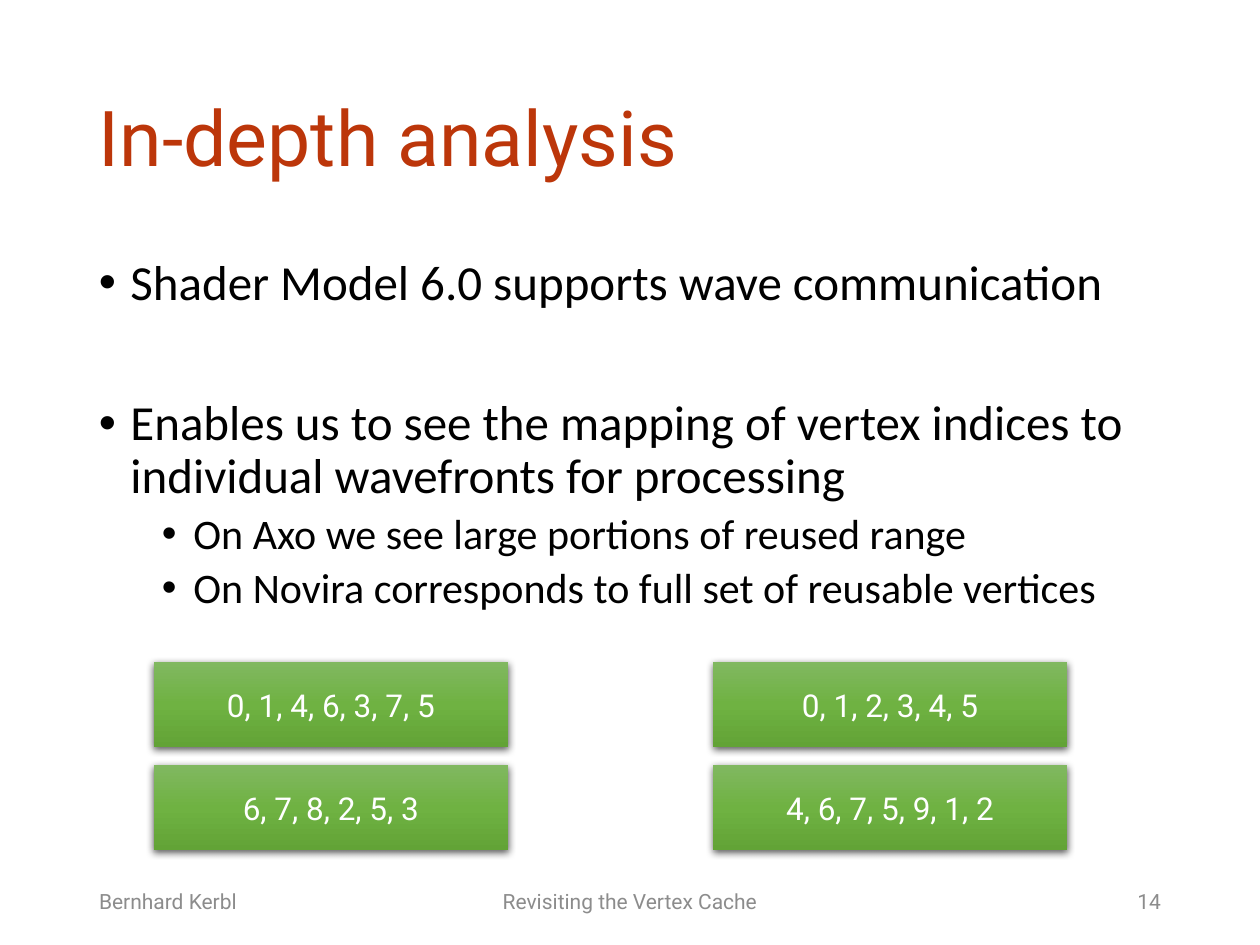
from copy import deepcopy

from lxml import etree
from pptx import Presentation
from pptx.dml.color import RGBColor
from pptx.enum.shapes import MSO_SHAPE
from pptx.enum.text import MSO_ANCHOR, PP_ALIGN
from pptx.oxml.ns import qn
from pptx.util import Pt

LEFT, CENTER, RIGHT = PP_ALIGN.LEFT, PP_ALIGN.CENTER, PP_ALIGN.RIGHT
TOP, MIDDLE = MSO_ANCHOR.TOP, MSO_ANCHOR.MIDDLE
RECTANGLE = MSO_SHAPE.RECTANGLE

TITLE = "In-depth analysis"
BULLETS = [
    (0, 0, "Shader Model 6.0 supports wave communication"),
    (0, 50, "Enables us to see the mapping of vertex indices to "
            "individual wavefronts for processing"),
    (1, 5, "On Axo we see large portions of reused range"),
    (1, 5, "On Novira corresponds to full set of reusable vertices"),
]
WAVEFRONTS = [
    ["0, 1, 4, 6, 3, 7, 5", "0, 1, 2, 3, 4, 5"],
    ["6, 7, 8, 2, 5, 3", "4, 6, 7, 5, 9, 1, 2"],
]
FOOTER = [
    (49.5, 162, LEFT, "Bernhard Kerbl"),
    (238.5, 243, CENTER, "Revisiting the Vertex Cache"),
    (508.5, 162, RIGHT, "14"),
]

THEME = {
    "heading_font": "Roboto", "body_font": "Calibri",
    "title": "BC360A", "body": "000000", "footer": "8C8C8C", "block": "FFFFFF",
    "gradient": [(0, "81B861"), (0.5, "6FB242"), (1, "62A336")],
    "shadow": "000000",
    "title_size": 44, "level_sizes": [28, 24], "block_size": 18, "footer_size": 12,
}

MARGIN, CONTENT_WIDTH = 49.5, 621
BLOCK_LEFT, BLOCK_TOP = 87.9, 378
BLOCK_WIDTH, BLOCK_HEIGHT = 202.5, 49
COLUMN_STEP, ROW_STEP = 319.5, 59


def style(para, font_name, size, color):
    para.font.name = font_name
    para.font.size = Pt(size)
    para.font.color.rgb = RGBColor.from_string(color)


def add_text_box(page, left, top, width, height, anchor):
    box = page.shapes.add_textbox(Pt(left), Pt(top), Pt(width), Pt(height))
    box.text_frame.word_wrap = True
    box.text_frame.vertical_anchor = anchor
    return box.text_frame


def add_bullet(para, level):
    properties = para._p.get_or_add_pPr()
    properties.set("marL", str(Pt(18 + 36 * level)))
    properties.set("indent", str(Pt(-18)))
    etree.SubElement(properties, qn("a:buFont")).set("typeface", "Arial")
    etree.SubElement(properties, qn("a:buChar")).set("char", "•")


def fill_gradient(shape):
    shape.fill.gradient()
    shape.fill.gradient_angle = 270
    stop_list = shape._element.spPr.find(".//" + qn("a:gsLst"))
    stop_list.append(deepcopy(stop_list[-1]))
    for stop, (position, color) in zip(shape.fill.gradient_stops, THEME["gradient"]):
        stop.position = position
        stop.color.rgb = RGBColor.from_string(color)


def add_shadow(shape):
    shape.shadow.inherit = False
    effects = shape._element.spPr.find(qn("a:effectLst"))
    shadow = etree.SubElement(effects, qn("a:outerShdw"), blurRad=str(Pt(4.5)),
                              dist=str(Pt(1.5)), dir="5400000", algn="ctr",
                              rotWithShape="0")
    color = etree.SubElement(shadow, qn("a:srgbClr"), val=THEME["shadow"])
    etree.SubElement(color, qn("a:alpha"), val="63000")


def add_block(page, row, column, text):
    block = page.shapes.add_shape(
        RECTANGLE, Pt(BLOCK_LEFT + column * COLUMN_STEP), Pt(BLOCK_TOP + row * ROW_STEP),
        Pt(BLOCK_WIDTH), Pt(BLOCK_HEIGHT))
    fill_gradient(block)
    block.line.fill.background()
    add_shadow(block)
    block.text_frame.text = text
    block.text_frame.vertical_anchor = MIDDLE
    para = block.text_frame.paragraphs[0]
    para.alignment = CENTER
    style(para, THEME["heading_font"], THEME["block_size"], THEME["block"])


def main():
    deck = Presentation()
    deck.slide_width, deck.slide_height = Pt(720), Pt(540)
    page = deck.slides.add_slide(deck.slide_layouts[6])

    frame = add_text_box(page, MARGIN, 28.8, CONTENT_WIDTH, 104.4, MIDDLE)
    frame.text = TITLE
    para = frame.paragraphs[0]
    para.line_spacing = 0.9
    style(para, THEME["heading_font"], THEME["title_size"], THEME["title"])

    frame = add_text_box(page, MARGIN, 144, CONTENT_WIDTH, 342.7, TOP)
    for index, (level, space, text) in enumerate(BULLETS):
        para = frame.add_paragraph() if index else frame.paragraphs[0]
        para.text = text
        para.level = level
        para.line_spacing = 0.9
        para.space_before = Pt(space)
        add_bullet(para, level)
        style(para, THEME["body_font"], THEME["level_sizes"][level], THEME["body"])

    for left, width, alignment, text in FOOTER:
        frame = add_text_box(page, left, 500.5, width, 28.75, MIDDLE)
        frame.text = text
        para = frame.paragraphs[0]
        para.alignment = alignment
        style(para, THEME["heading_font"], THEME["footer_size"], THEME["footer"])

    for row, texts in enumerate(WAVEFRONTS):
        for column, text in enumerate(texts):
            add_block(page, row, column, text)

    deck.save("out.pptx")


if __name__ == "__main__":
    main()
